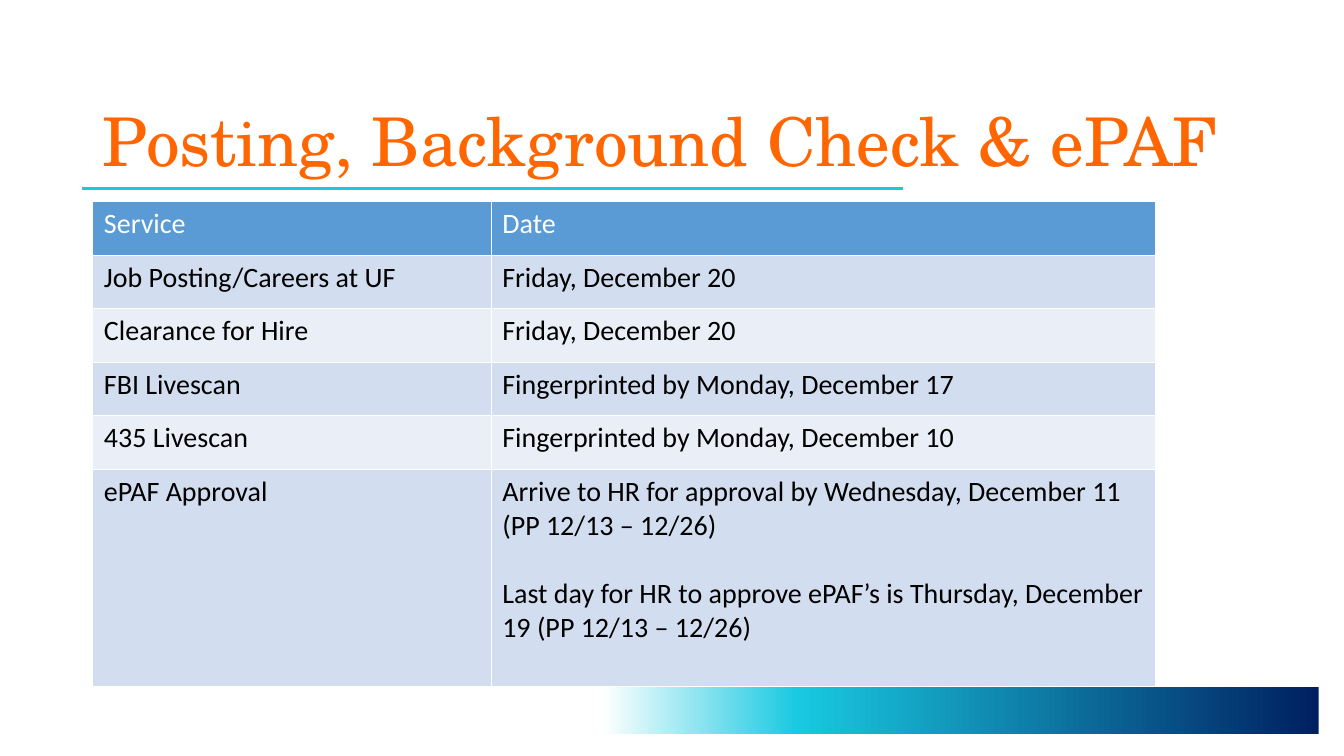
import dataclasses

import lxml.etree
import pptx
import pptx.dml.color
import pptx.enum.shapes
import pptx.enum.text
import pptx.oxml
import pptx.oxml.ns
import pptx.util

Cm = pptx.util.Cm
Pt = pptx.util.Pt
ANCHOR = pptx.enum.text.MSO_ANCHOR
ALIGN = pptx.enum.text.PP_ALIGN
qn = pptx.oxml.ns.qn


@dataclasses.dataclass(frozen=True)
class Theme:
    orange: str = "FF6600"
    turquoise: str = "19C9E1"
    navy: str = "002060"
    white: str = "FFFFFF"
    black: str = "000000"
    header: str = "5B9BD5"
    bands: tuple = ("D2DEEF", "EAEFF7")
    title_size: int = 48
    table_size: int = 20
    title_font: str = "TeX Gyre Schola"
    table_font: str = "Calibri"


THEME = Theme()

HEADINGS = ("Service", "Date")
SERVICES = (
    ("Job Posting/Careers at UF", "Friday, December 20"),
    ("Clearance for Hire", "Friday, December 20"),
    ("FBI Livescan", "Fingerprinted by Monday, December 17"),
    ("435 Livescan", "Fingerprinted by Monday, December 10"),
    ("ePAF Approval",
     "Arrive to HR for approval by Wednesday, December 11 (PP 12/13 – 12/26)\n"
     "Last day for HR to approve ePAF’s is Thursday, December 19 (PP 12/13 – 12/26)"),
)


def rgb(value):
    return pptx.dml.color.RGBColor.from_string(value)


def apply_format(target, **values):
    for name, value in values.items():
        setattr(target, name, value)


def format_font(font, name, size, color):
    apply_format(font, name=name, size=Pt(size), bold=False)
    font.color.rgb = rgb(color)


def add_title(slide, text):
    title = slide.shapes.title
    apply_format(title, left=Cm(2.34), top=Cm(1.02), width=Cm(29.21), height=Cm(3.68))
    apply_format(title.text_frame, text=text, word_wrap=True, vertical_anchor=ANCHOR.BOTTOM,
                 auto_size=pptx.enum.text.MSO_AUTO_SIZE.NONE)
    paragraph = title.text_frame.paragraphs[0]
    apply_format(paragraph, alignment=ALIGN.LEFT, line_spacing=0.9)
    format_font(paragraph.font, THEME.title_font, THEME.title_size, THEME.orange)


def add_rule(slide):
    rule = slide.shapes.add_connector(
        pptx.enum.shapes.MSO_CONNECTOR.STRAIGHT, Cm(2.06), Cm(4.75), Cm(22.76), Cm(4.75))
    rule.line.color.rgb = rgb(THEME.turquoise)
    rule.line.width = Pt(2)
    lxml.etree.SubElement(rule._element.spPr, qn("a:effectLst"))


def fill_gradient(shape, stops, angle):
    """Fill with any number of (percent, colour) stops."""
    shape.fill.gradient()
    shape.fill.gradient_angle = angle
    stop_list = shape._element.spPr.find(".//" + qn("a:gsLst"))
    for stop in list(stop_list):
        stop_list.remove(stop)
    for percent, color in stops:
        stop = lxml.etree.SubElement(stop_list, qn("a:gs"), pos=str(percent * 1000))
        lxml.etree.SubElement(stop, qn("a:srgbClr"), val=color)


def add_footer_band(slide):
    band = slide.shapes.add_shape(
        pptx.enum.shapes.MSO_SHAPE.RECTANGLE, Cm(14.99), Cm(17.3), Cm(18.24), Cm(1.19))
    band.shadow.inherit = False
    band.line.fill.background()
    fill_gradient(band, ((0, THEME.navy), (72, THEME.turquoise), (99, THEME.white)), 180)


def set_borders(cell):
    properties = cell._tc.get_or_add_tcPr()
    for side in "LRTB":
        line = lxml.etree.SubElement(properties, qn("a:ln" + side), w=str(Pt(1)))
        fill = lxml.etree.SubElement(line, qn("a:solidFill"))
        lxml.etree.SubElement(fill, qn("a:srgbClr"), val=THEME.white)


def fill_cell(cell, text, background, color):
    set_borders(cell)
    cell.fill.solid()
    cell.fill.fore_color.rgb = rgb(background)
    apply_format(cell, text=text, vertical_anchor=ANCHOR.TOP, margin_left=Cm(0.28),
                 margin_right=Cm(0.28), margin_top=Cm(0.13), margin_bottom=Cm(0.13))
    for index, paragraph in enumerate(cell.text_frame.paragraphs):
        if index:
            paragraph.space_before = Pt(24)
        format_font(paragraph.font, THEME.table_font, THEME.table_size, color)


def add_schedule(slide):
    rows = (HEADINGS, *SERVICES)
    heights = [Cm(1.35)] * len(SERVICES) + [Cm(5.46)]
    widths = (Cm(10.04), Cm(16.75))
    table = slide.shapes.add_table(
        len(rows), len(HEADINGS), Cm(2.34), Cm(5.08), sum(widths), sum(heights)).table
    for column, width in zip(table.columns, widths):
        column.width = width
    for row_index, (texts, height) in enumerate(zip(rows, heights)):
        table.rows[row_index].height = height
        if row_index == 0:
            colors = (THEME.header, THEME.white)
        else:
            colors = (THEME.bands[(row_index - 1) % 2], THEME.black)
        for column_index, text in enumerate(texts):
            fill_cell(table.cell(row_index, column_index), text, *colors)


def main():
    presentation = pptx.Presentation()
    apply_format(presentation, slide_width=Cm(33.87), slide_height=Cm(19.05))
    slide = presentation.slides.add_slide(presentation.slide_layouts[5])
    add_title(slide, "Posting, Background Check & ePAF")
    add_rule(slide)
    add_footer_band(slide)
    add_schedule(slide)
    presentation.save("out.pptx")


if __name__ == "__main__":
    main()
